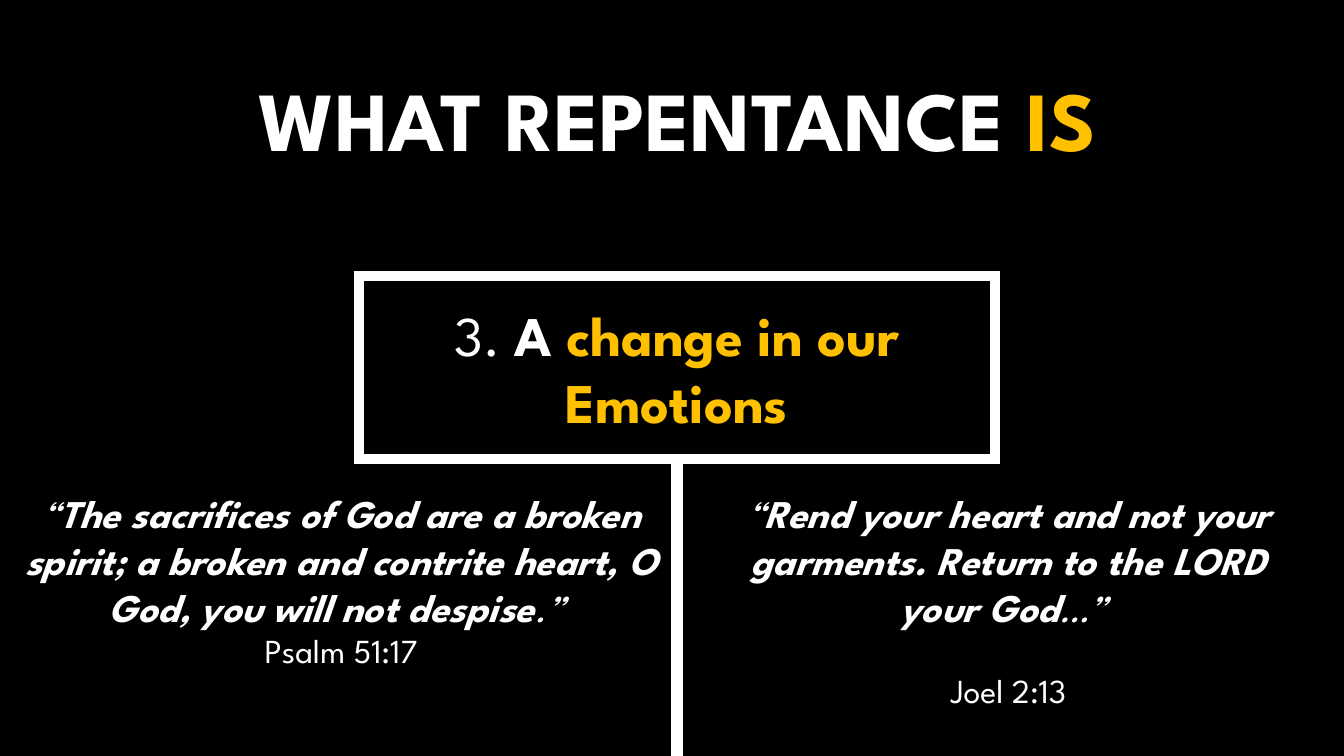
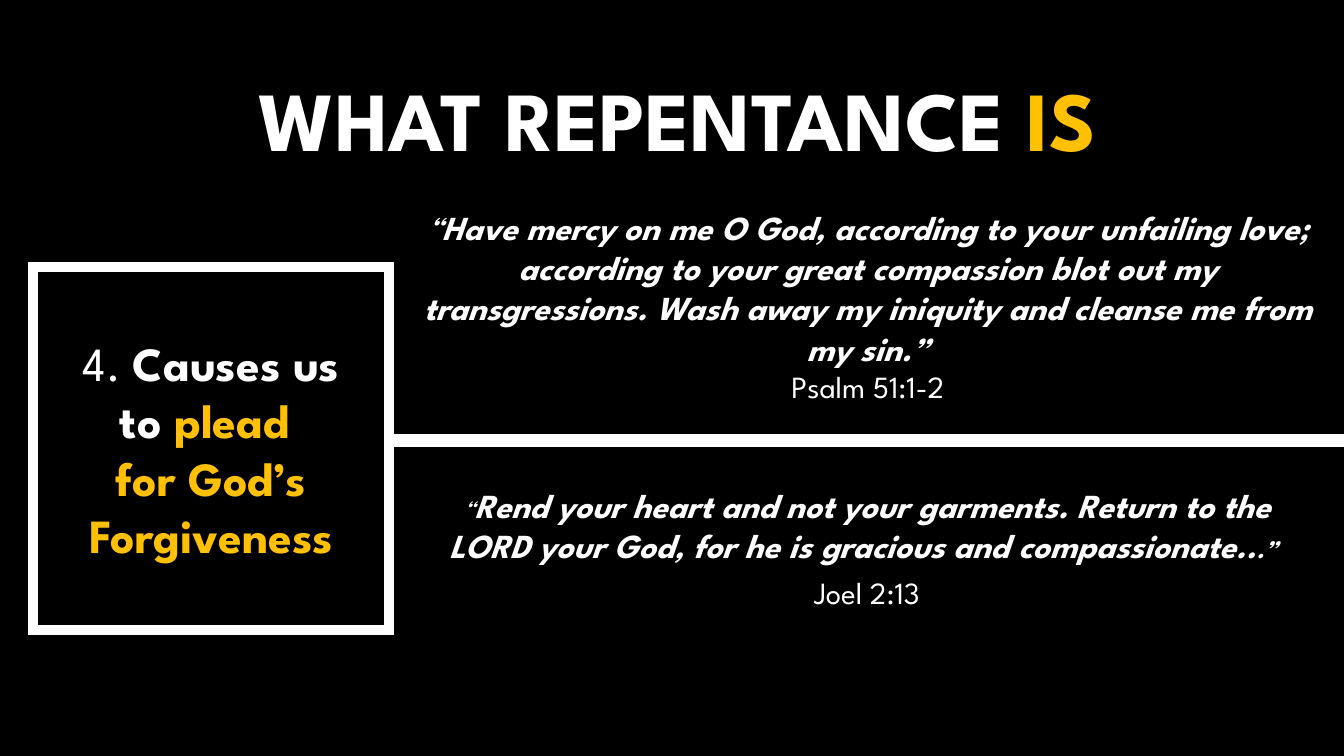
from dataclasses import dataclass
from lxml.etree import SubElement
from pptx import Presentation
from pptx.dml.color import RGBColor
from pptx.enum.shapes import MSO_CONNECTOR, MSO_SHAPE
from pptx.enum.text import MSO_ANCHOR, MSO_AUTO_SIZE, PP_ALIGN
from pptx.oxml.ns import qn
from pptx.util import Emu, Pt

# Shared look: a grid of 160 columns by 90 rows fills the slide
COLS, ROWS, CELL = 160, 90, 76200
FONT = "League Spartan"
HUES = {"back": "000000", "text": "FFFFFF", "gold": "FFC000"}
FRAME, RULE = 7.25, 9

# Font values of each kind of run
LOOKS = {
    "plain": {"bold": False, "italic": False},
    "bold": {"bold": True, "italic": False},
    "slant": {"bold": False, "italic": True},
    "verse": {"bold": True, "italic": True},
}


@dataclass(frozen=True)
class Run:
    text: str
    size: float
    look: str = "plain"
    hue: str = "text"


@dataclass(frozen=True)
class Para:
    runs: tuple[Run, ...]
    gap: float = 0


@dataclass(frozen=True)
class Area:
    x: float
    y: float
    w: float
    h: float


@dataclass(frozen=True)
class Block:
    area: Area
    paras: tuple[Para, ...]


@dataclass(frozen=True)
class Page:
    point: Block
    pad: float
    verses: tuple[Block, Block]
    rule: float | None = None  # row of a level rule; None drops it from the box


TITLE = Block(Area(8.4, 7.32, 144.48, 13.32), (
    Para((Run("WHAT REPENTANCE ", 60, "bold"), Run("IS", 60, "bold", "gold"))),
))

PAGES = (
    Page(
        Block(Area(42.72, 32.88, 75.72, 21.72), (
            Para((Run("3. ", 40), Run("A ", 40, "bold"),
                  Run("change in our Emotions", 40, "bold", "gold"))),
        )),
        2.88,
        (
            Block(Area(0.6, 57.6, 80.04, 29.52), (
                Para((Run("“", 28, "slant"),
                      Run("The sacrifices of God are a broken spirit; a broken and "
                          "contrite heart, O God, you will not despise", 28, "verse"),
                      Run(".” ", 28, "slant"))),
                Para((Run("Psalm 51:17", 24),)),
            )),
            Block(Area(87.24, 57.6, 65.64, 27.84), (
                Para((Run("“", 28, "slant"),
                      Run("Rend your heart and not your garments. Return to the "
                          "LORD your God", 28, "verse"),
                      Run("…” ", 28, "slant"))),
                Para((Run("Joel 2:13", 24),), 28.6),
            )),
        ),
    ),
    Page(
        Block(Area(3.96, 31.8, 42.36, 43.2), (
            Para((Run("4. ", 34), Run("Causes us to ", 34, "bold"),
                  Run("plead ", 34, "bold", "gold"))),
            Para((Run("for God’s Forgiveness", 34, "bold", "gold"),)),
        )),
        4.08,
        (
            Block(Area(49.2, 24, 108.24, 25.08), (
                Para((Run("“", 24, "slant"),
                      Run("Have mercy on me O God, according to your unfailing love; "
                          "according to your great compassion blot out my "
                          "transgressions. Wash away my iniquity and cleanse me from "
                          "my sin.”", 24, "verse"))),
                Para((Run("Psalm 51:1-2", 22),)),
            )),
            Block(Area(49.08, 57.12, 108.24, 21.24), (
                Para((Run("“", 18, "slant"),
                      Run("Rend your heart and not your garments. Return to the LORD "
                          "your God, for he is gracious and compassionate..",
                          24, "verse"),
                      Run(".”", 18, "verse"), Run(" ", 20, "bold"))),
                Para((Run("Joel 2:13", 22),), 6),
            )),
        ),
        52.44,
    ),
)


def cells(count: float) -> Emu:
    return Emu(round(count * CELL))


def color(hue: str) -> RGBColor:
    return RGBColor.from_string(HUES[hue])


def place(shape, area: Area) -> None:
    spots = {"left": area.x, "top": area.y, "width": area.w, "height": area.h}
    for name, count in spots.items():
        setattr(shape, name, cells(count))


def write(shape, paras: tuple[Para, ...], anchor: MSO_ANCHOR) -> None:
    frame = shape.text_frame
    setup = {"word_wrap": True, "auto_size": MSO_AUTO_SIZE.NONE,
             "vertical_anchor": anchor}
    for name, value in setup.items():
        setattr(frame, name, value)
    for spot, para in enumerate(paras):
        line = frame.add_paragraph() if spot else frame.paragraphs[0]
        form = {"alignment": PP_ALIGN.CENTER, "space_before": Pt(para.gap),
                "space_after": Pt(0)}
        for name, value in form.items():
            setattr(line, name, value)
        # No bullet and no indent
        props = line._p.get_or_add_pPr()
        for name in ("marL", "indent"):
            props.set(name, "0")
        SubElement(props, qn("a:buNone"))
        for item in para.runs:
            run = line.add_run()
            run.text = item.text
            look = {"name": FONT, "size": Pt(item.size), **LOOKS[item.look]}
            for name, value in look.items():
                setattr(run.font, name, value)
            run.font.color.rgb = color(item.hue)


def fill(shape, block: Block, anchor: MSO_ANCHOR = MSO_ANCHOR.TOP) -> None:
    place(shape, block.area)
    write(shape, block.paras, anchor)


def stroke(shape, width: float) -> None:
    shape.line.color.rgb = color("text")
    shape.line.width = Pt(width)


def frame(slide, point: Block, pad: float):
    box = slide.shapes.add_shape(MSO_SHAPE.RECTANGLE, 0, 0, 0, 0)
    box.shadow.inherit = False
    box.fill.background()
    stroke(box, FRAME)
    SubElement(box.line._get_or_add_ln(), qn("a:miter"), lim="800000")
    for name in ("margin_left", "margin_right"):
        setattr(box.text_frame, name, cells(pad))
    fill(box, point, MSO_ANCHOR.MIDDLE)
    return box


def link(slide, box, area: Area, row: float | None) -> None:
    if row is None:
        mid = area.x + area.w / 2
        ends = (mid, area.y + area.h, mid, ROWS)
    else:
        ends = (area.x + area.w, row, COLS, row)
    rule = slide.shapes.add_connector(MSO_CONNECTOR.STRAIGHT, *map(cells, ends))
    if row is None:
        rule.begin_connect(box, 2)
    stroke(rule, RULE)
    SubElement(rule._element.spPr, qn("a:effectLst"))


def build(deck, page: Page) -> None:
    # Title and two verses sit in the layout's placeholders
    slide = deck.slides.add_slide(deck.slide_layouts[3])
    fill(slide.shapes.title, TITLE, MSO_ANCHOR.MIDDLE)
    for spot, verse in enumerate(page.verses, 1):
        fill(slide.placeholders[spot], verse)
    # Framed point and its rule
    box = frame(slide, page.point, page.pad)
    link(slide, box, page.point.area, page.rule)


def main() -> None:
    deck = Presentation()
    deck.slide_width, deck.slide_height = cells(COLS), cells(ROWS)
    back = deck.slide_master.background.fill
    back.solid()
    back.fore_color.rgb = color("back")
    for page in PAGES:
        build(deck, page)
    deck.save("out.pptx")


if __name__ == "__main__":
    main()
